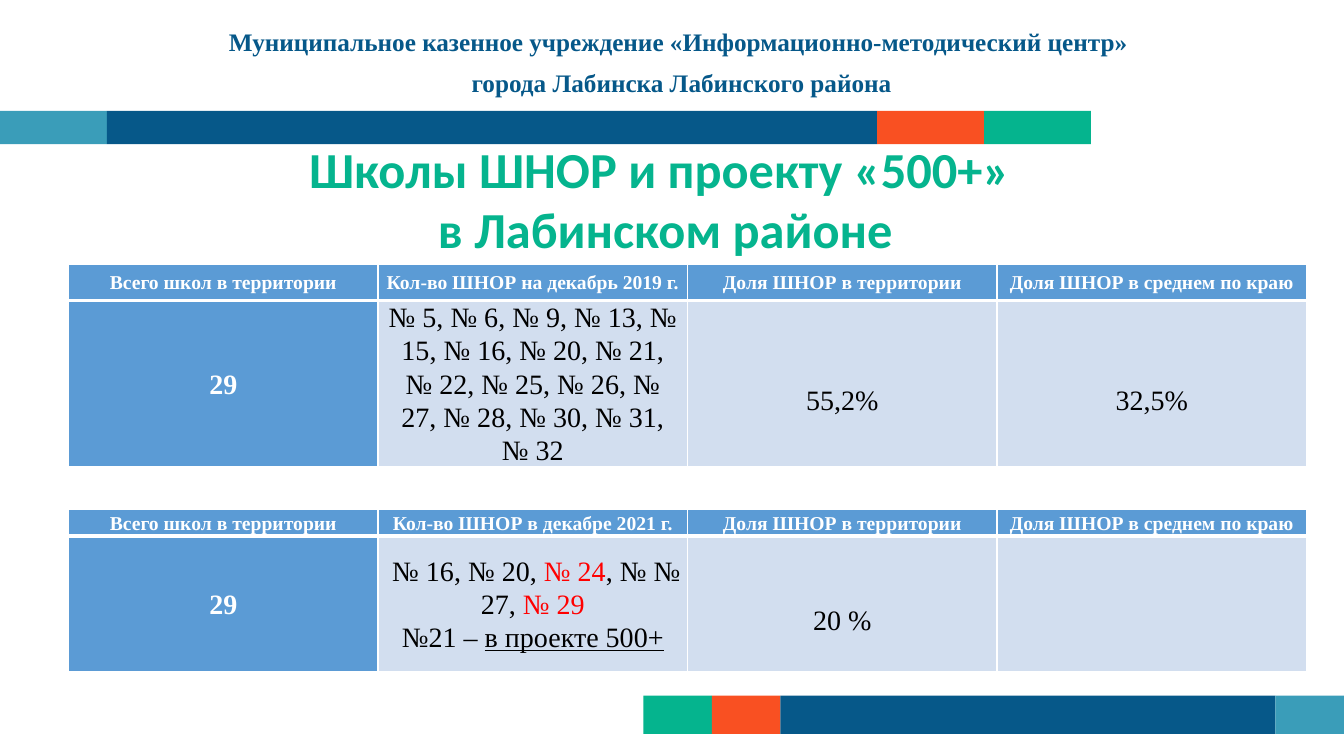
from dataclasses import dataclass

from pptx import Presentation
from pptx.dml.color import RGBColor
from pptx.enum import shapes, text
from pptx.oxml import parse_xml
from pptx.oxml.ns import nsdecls
from pptx.util import Inches, Pt

NAVY, TEAL, ORANGE, GREEN = "065889", "3A9DB9", "F95022", "05B48E"
WHITE, BLACK, RED = "FFFFFF", "000000", "FF0000"
HEADER_BLUE, PALE_BLUE = "5B9BD5", "D2DEEF"
SERIF = "Times New Roman"


@dataclass
class Part:
    """A stretch of text with its own colour or underline."""
    words: str
    color: str = BLACK
    underline: bool = False


@dataclass
class Stripe:
    left: float
    top: float
    height: float
    bands: list[tuple[str, float]]


@dataclass
class SchoolTable:
    top: float
    row_heights: tuple[float, float]
    count_header: str
    schools: list[list[Part]]
    share: str
    regional_share: str


STRIPES = [
    Stripe(0, 1.1, 0.33, [(TEAL, 1.06), (NAVY, 7.64), (ORANGE, 1.06), (GREEN, 1.06)]),
    Stripe(6.38, 6.9, 0.38, [(GREEN, 0.68), (ORANGE, 0.68), (NAVY, 4.91), (TEAL, 0.68)]),
]

TABLES = [
    SchoolTable(
        2.62, (0.36, 1.64), "Кол-во ШНОР на декабрь 2019 г.",
        [[Part("№ 5, № 6, № 9, № 13, № 15, № 16, № 20, № 21, № 22, № 25, "
               "№ 26, № 27, № 28, № 30, № 31,")],
         [Part("№ 32")]],
        "55,2%", "32,5%"),
    SchoolTable(
        5.05, (0.27, 1.34), "Кол-во ШНОР в декабре 2021 г.",
        [[Part(" № 16, № 20, "), Part("№ 24", RED), Part(", № № 27, "), Part("№ 29", RED)],
         [Part("№21 – "), Part("в проекте 500+", underline=True)]],
        "20 %", ""),
]


def rgb(color: str) -> RGBColor:
    return RGBColor.from_string(color)


def format_paragraph(p, size: float, color: str | None, bold: bool, name: str = SERIF) -> None:
    p.alignment = text.PP_ALIGN.CENTER
    p.font.size, p.font.bold, p.font.name = Pt(size), bold, name
    if color:
        p.font.color.rgb = rgb(color)


def place(sp, left: float, top: float, width: float, height: float) -> None:
    sp.left, sp.top, sp.width, sp.height = map(Inches, (left, top, width, height))


def add_headings(s) -> None:
    title, subtitle = s.placeholders
    place(subtitle, 1, 0.24, 11.52, 0.84)
    tf = subtitle.text_frame
    tf.auto_size = text.MSO_AUTO_SIZE.NONE
    tf.vertical_anchor = text.MSO_ANCHOR.TOP
    tf.text = ("Муниципальное казенное учреждение «Информационно-методический центр» \n"
               "города Лабинска Лабинского района")
    for p in tf.paragraphs:
        format_paragraph(p, 18, NAVY, True)
        p.line_spacing, p.space_before = 0.9, Pt(10)

    place(title, 0.68, 1.26, 11.84, 1.36)
    tf = title.text_frame
    tf.auto_size = text.MSO_AUTO_SIZE.NONE
    tf.vertical_anchor = text.MSO_ANCHOR.BOTTOM
    p = tf.paragraphs[0]
    p.text = "Школы ШНОР и проекту «500+» \vв Лабинском районе"
    format_paragraph(p, 36, GREEN, True, "Calibri")
    p.space_after = Pt(6)


def add_stripe(s, stripe: Stripe) -> None:
    left = stripe.left
    for color, width in stripe.bands:
        sp = s.shapes.add_shape(shapes.MSO_SHAPE.RECTANGLE, Inches(left), Inches(stripe.top),
                                Inches(width), Inches(stripe.height))
        sp.shadow.inherit = False
        sp.fill.solid()
        sp.fill.fore_color.rgb = rgb(color)
        sp.line.fill.background()
        left += width


def style_cell(cell, fill: str, bottom_border: float) -> None:
    """Set white borders, fill, anchor and margins."""
    tc_pr = cell._tc.get_or_add_tcPr()
    for side, width in (("L", 1), ("R", 1), ("T", 1), ("B", bottom_border)):
        tc_pr.append(parse_xml(
            f'<a:ln{side} {nsdecls("a")} w="{Pt(width)}"><a:solidFill>'
            f'<a:srgbClr val="{WHITE}"/></a:solidFill></a:ln{side}>'))
    cell.fill.solid()
    cell.fill.fore_color.rgb = rgb(fill)
    cell.vertical_anchor = text.MSO_ANCHOR.MIDDLE
    cell.margin_left = cell.margin_right = Inches(0.07)
    cell.margin_top = cell.margin_bottom = 0


def write_cell(cell, lines: list[list[Part]], size: float, bold: bool) -> None:
    tf = cell.text_frame
    for i, parts in enumerate(lines):
        p = tf.add_paragraph() if i else tf.paragraphs[0]
        colors = {part.color for part in parts}
        format_paragraph(p, size, colors.pop() if len(colors) == 1 else None, bold)
        p.line_spacing = 1.07
        for part in parts:
            r = p.add_run()
            r.text = part.words
            if colors:
                r.font.color.rgb = rgb(part.color)
            if part.underline:
                r.font.underline = True


def add_school_table(s, data: SchoolTable) -> None:
    table = s.shapes.add_table(2, 4, Inches(0.68), Inches(data.top), Inches(12.28),
                               Inches(sum(data.row_heights))).table
    for row, height in zip(table.rows, data.row_heights):
        row.height = Inches(height)

    headers = ["Всего школ в территории", data.count_header,
               "Доля ШНОР в территории", "Доля ШНОР в среднем по краю"]
    for col, header in enumerate(headers):
        cell = table.cell(0, col)
        style_cell(cell, HEADER_BLUE, 3)
        write_cell(cell, [[Part(header, WHITE)]], 14, True)

    values = [[[Part("29", WHITE)]], data.schools,
              [[Part(data.share)]], [[Part(data.regional_share)]]]
    for col, lines in enumerate(values):
        cell = table.cell(1, col)
        style_cell(cell, PALE_BLUE if col else HEADER_BLUE, 1)
        if col >= 2:
            cell.margin_top = Inches(0.33)
        if lines[0][0].words:
            write_cell(cell, lines, 20, col == 0)


def main() -> None:
    prs = Presentation()
    prs.slide_width, prs.slide_height = Inches(13.33), Inches(7.5)
    s = prs.slides.add_slide(prs.slide_layouts[0])
    for stripe in STRIPES:
        add_stripe(s, stripe)
    add_headings(s)
    for data in TABLES:
        add_school_table(s, data)
    prs.save("out.pptx")


if __name__ == "__main__":
    main()
